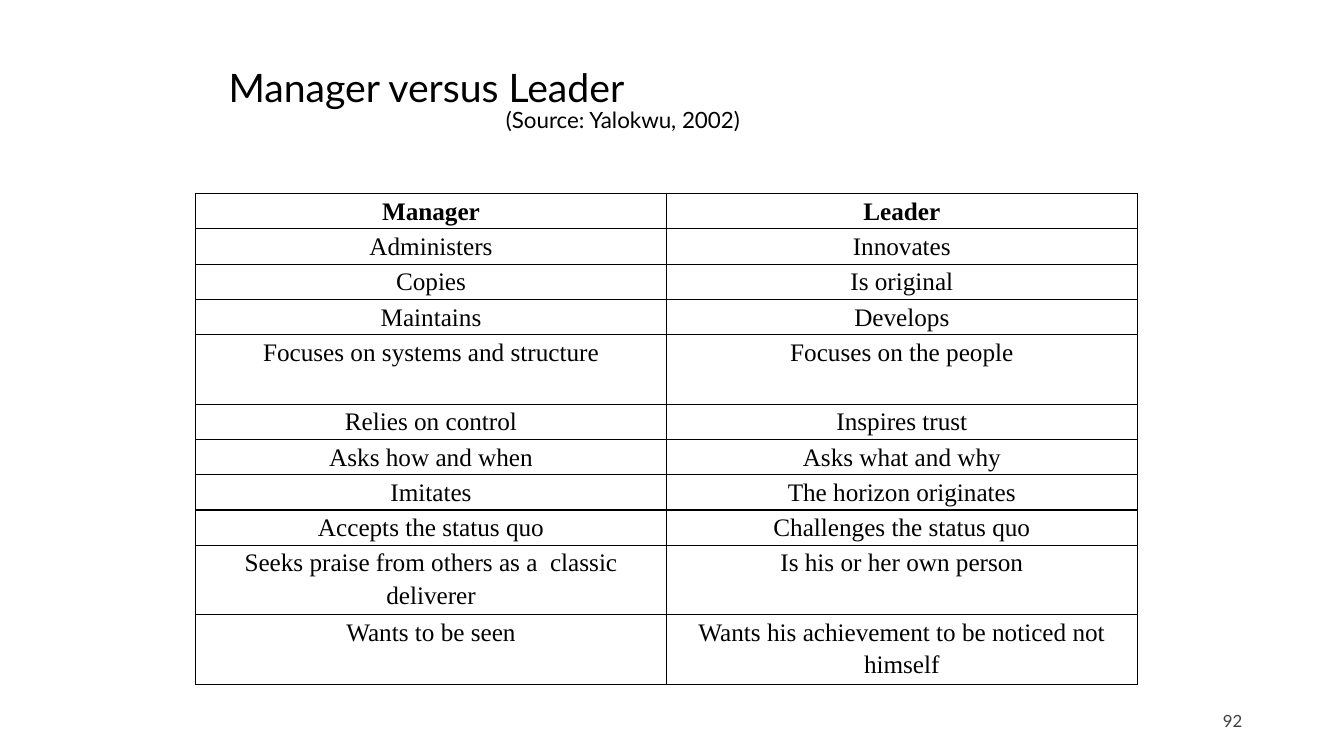
import dataclasses
import lxml.etree
import pptx
import pptx.dml.color
import pptx.enum.text
import pptx.oxml.ns
import pptx.util

Inches = pptx.util.Inches
Pt = pptx.util.Pt
Align = pptx.enum.text.PP_ALIGN
Anchor = pptx.enum.text.MSO_ANCHOR
Auto = pptx.enum.text.MSO_AUTO_SIZE
qn = pptx.oxml.ns.qn

BLACK = "000000"
ROWS = [
    ("Manager", "Leader"),
    ("Administers", "Innovates"),
    ("Copies", "Is original"),
    ("Maintains", "Develops"),
    ("Focuses on systems and structure", "Focuses on the people"),
    ("Relies on control", "Inspires trust"),
    ("Asks how and when", "Asks what and why"),
    ("Imitates", "The horizon originates"),
    ("Accepts the status quo", "Challenges the status quo"),
    ("Seeks praise from others as a  classic deliverer", "Is his or her own person"),
    ("Wants to be seen", "Wants his achievement to be noticed not himself"),
]
TALL = {4, 9, 10}


@dataclasses.dataclass
class Label:
    text: str
    box: tuple[float, float, float, float]
    size: int
    color: str = BLACK
    align: Align = Align.LEFT
    frame: dict = dataclasses.field(default_factory=dict)


LABELS = [
    Label("(Source: Yalokwu, 2002)", (4.92, 1, 2.63, 1.04), 16,
          frame={"word_wrap": False, "auto_size": Auto.SHAPE_TO_FIT_TEXT}),
    Label("Manager versus Leader", (2.17, 0.58, 7.56, 1.24), 28,
          frame={"word_wrap": True, "auto_size": Auto.SHAPE_TO_FIT_TEXT}),
    Label("92", (9.42, 6.95, 3, 0.4), 12, "3F3F3F", Align.RIGHT,
          {"word_wrap": True, "vertical_anchor": Anchor.MIDDLE}),
]


def apply(target: object, values: dict) -> None:
    for name, value in values.items():
        setattr(target, name, value)


def write(para: object, text: str, color: str, font: dict, form: dict) -> None:
    run = para.add_run()
    run.text = text
    apply(run.font, font)
    run.font.color.rgb = pptx.dml.color.RGBColor.from_string(color)
    apply(para, form)


def draw_label(slide: object, label: Label) -> None:
    box = slide.shapes.add_textbox(*map(Inches, label.box))
    apply(box.text_frame, label.frame)
    write(box.text_frame.paragraphs[0], label.text, label.color,
          {"name": "Lato", "size": Pt(label.size)}, {"alignment": label.align})


def border(cell: object) -> None:
    props = cell._tc.get_or_add_tcPr()
    for side in ("lnL", "lnR", "lnT", "lnB"):
        line = lxml.etree.SubElement(props, qn(f"a:{side}"), w=str(Pt(1)))
        fill = lxml.etree.SubElement(line, qn("a:solidFill"))
        lxml.etree.SubElement(fill, qn("a:srgbClr"), val=BLACK)


def draw_table(slide: object) -> None:
    high = [0.69 if i in TALL else 0.35 for i in range(len(ROWS))]
    grid = slide.shapes.add_table(
        len(ROWS), 2, Inches(1.94), Inches(1.92), Inches(9.34), Inches(sum(high))
    ).table
    apply(grid, {"first_row": False, "horz_banding": False})
    for i, row in enumerate(ROWS):
        grid.rows[i].height = Inches(high[i])
        for j, text in enumerate(row):
            cell = grid.cell(i, j)
            apply(cell, {"margin_left": Inches(0.07), "margin_right": Inches(0.07),
                         "margin_top": 0, "margin_bottom": 0})
            border(cell)
            cell.fill.background()
            write(cell.text_frame.paragraphs[0], text, BLACK,
                  {"name": "Times New Roman", "size": Pt(18), "bold": i == 0},
                  {"alignment": Align.CENTER, "line_spacing": 1.15})


def main() -> None:
    deck = pptx.Presentation()
    apply(deck, {"slide_width": Inches(13.33), "slide_height": Inches(7.5)})
    slide = deck.slides.add_slide(deck.slide_layouts[6])
    draw_table(slide)
    for label in LABELS:
        draw_label(slide, label)
    deck.save("out.pptx")


if __name__ == "__main__":
    main()
